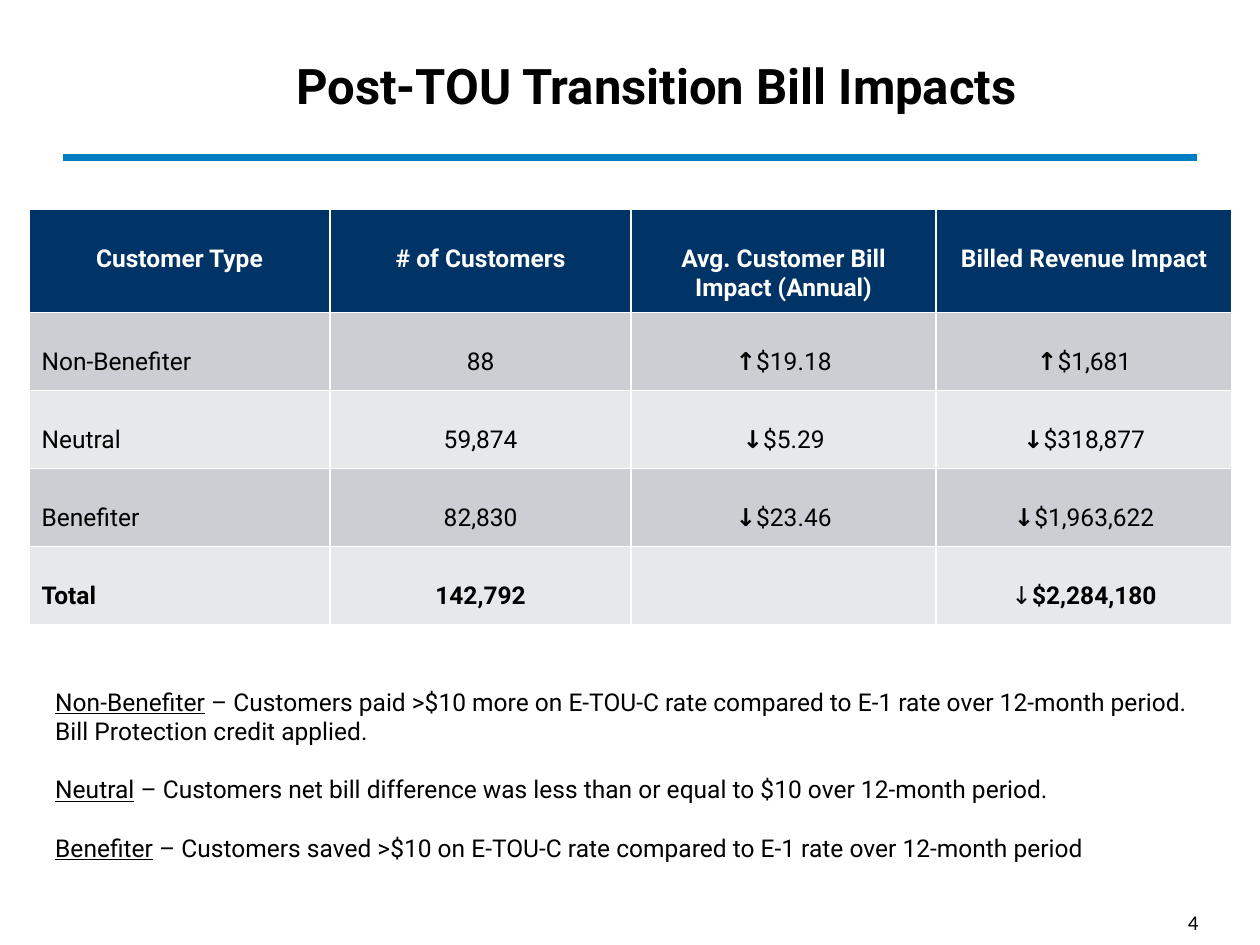
from lxml.etree import SubElement
from pptx import Presentation
from pptx.dml.color import RGBColor
from pptx.enum.shapes import MSO_CONNECTOR
from pptx.enum.text import MSO_ANCHOR, PP_ALIGN
from pptx.oxml.ns import qn
from pptx.util import Inches, Pt

BLACK = RGBColor(0x00, 0x00, 0x00)
WHITE = RGBColor(0xFF, 0xFF, 0xFF)
BLUE = RGBColor(0x00, 0x7D, 0xC3)
NAVY = RGBColor(0x00, 0x33, 0x66)
DARK_BAND = RGBColor(0xCC, 0xCE, 0xD3)
LIGHT_BAND = RGBColor(0xE7, 0xE8, 0xEA)

COLUMN_WIDTHS = [2.39, 2.39, 2.42, 2.35]
ROW_HEIGHTS = [0.82] + [0.62] * 4
ROWS = [
    ["Customer Type", "# of Customers", "Avg. Customer Bill Impact (Annual)", "Billed Revenue Impact"],
    ["Non-Benefiter", "88", "↑$19.18", "↑$1,681"],
    ["Neutral", "59,874", "↓$5.29", "↓$318,877"],
    ["Benefiter", "82,830", "↓$23.46", "↓$1,963,622"],
    ["Total", "142,792", "", "↓$2,284,180"],
]
DEFINITIONS = [
    ("Non-Benefiter", " – Customers paid >$10 more on E-TOU-C rate compared to E-1 rate "
                      "over 12-month period. Bill Protection credit applied."),
    ("Neutral", " – Customers net bill difference was less than or equal to $10 over 12-month period."),
    ("Benefiter", " – Customers saved >$10 on E-TOU-C rate compared to E-1 rate over 12-month period"),
]


def add_run(paragraph, text, size=14, color=BLACK, bold=False, name="Roboto"):
    run = paragraph.add_run()
    run.text = text
    run.font.size = Pt(size)
    run.font.name = name
    run.font.bold = bold
    run.font.color.rgb = color
    return run


presentation = Presentation()
presentation.slide_width = Inches(10)
presentation.slide_height = Inches(7.5)
slide = presentation.slides.add_slide(presentation.slide_layouts[5])

# Title and rule
title = slide.shapes.title
title.left, title.top = Inches(2.25), Inches(0.25)
title.width, title.height = Inches(7.42), Inches(0.92)
title.text_frame.vertical_anchor = MSO_ANCHOR.MIDDLE
paragraph = title.text_frame.paragraphs[0]
paragraph.alignment = PP_ALIGN.LEFT
paragraph.line_spacing = 0.85
add_run(paragraph, "Post-TOU Transition Bill Impacts", size=28, bold=True)

rule = slide.shapes.add_connector(
    MSO_CONNECTOR.STRAIGHT, Inches(0.5), Inches(1.25), Inches(9.5), Inches(1.25))
rule.line.color.rgb = BLUE
rule.line.width = Pt(4.5)
SubElement(rule._element.spPr, qn("a:effectLst"))

# Bill impact table
table = slide.shapes.add_table(
    len(ROWS), len(COLUMN_WIDTHS), Inches(0.23), Inches(1.66),
    Inches(sum(COLUMN_WIDTHS)), Inches(sum(ROW_HEIGHTS))).table
for column, width in zip(table.columns, COLUMN_WIDTHS):
    column.width = Inches(width)
for row, height in zip(table.rows, ROW_HEIGHTS):
    row.height = Inches(height)

for row_index, texts in enumerate(ROWS):
    is_header = row_index == 0
    is_bold = row_index in (0, len(ROWS) - 1)
    band = NAVY if is_header else DARK_BAND if row_index % 2 else LIGHT_BAND
    for column_index, text in enumerate(texts):
        cell = table.cell(row_index, column_index)
        cell.fill.solid()
        cell.fill.fore_color.rgb = band
        if not text:
            continue
        cell.margin_top = Inches(0.28)
        paragraph = cell.text_frame.paragraphs[0]
        is_centered = is_header or column_index > 0
        paragraph.alignment = PP_ALIGN.CENTER if is_centered else PP_ALIGN.LEFT
        color = WHITE if is_header else BLACK
        if text[0] in "↑↓":
            add_run(paragraph, text[0], color=color, bold=not is_bold)
            text = text[1:]
        add_run(paragraph, text, color=color, bold=is_bold)

# Slide number
number_box = slide.shapes.add_textbox(Inches(7.21), Inches(6.97), Inches(2.4), Inches(0.5))
number_box.text_frame.word_wrap = True
number_box.text_frame.vertical_anchor = MSO_ANCHOR.BOTTOM
paragraph = number_box.text_frame.paragraphs[0]
paragraph.alignment = PP_ALIGN.RIGHT
add_run(paragraph, "4", size=12, name="Calibri")

# Definitions of the customer types
definition_box = slide.shapes.add_textbox(Inches(0.34), Inches(5.4), Inches(9.43), Inches(1.51))
text_frame = definition_box.text_frame
text_frame.word_wrap = True
for index, (term, meaning) in enumerate(DEFINITIONS):
    paragraph = text_frame.add_paragraph() if index else text_frame.paragraphs[0]
    if index:
        paragraph.space_before = Pt(16.5)
    add_run(paragraph, term).font.underline = True
    add_run(paragraph, meaning)

presentation.save("out.pptx")
